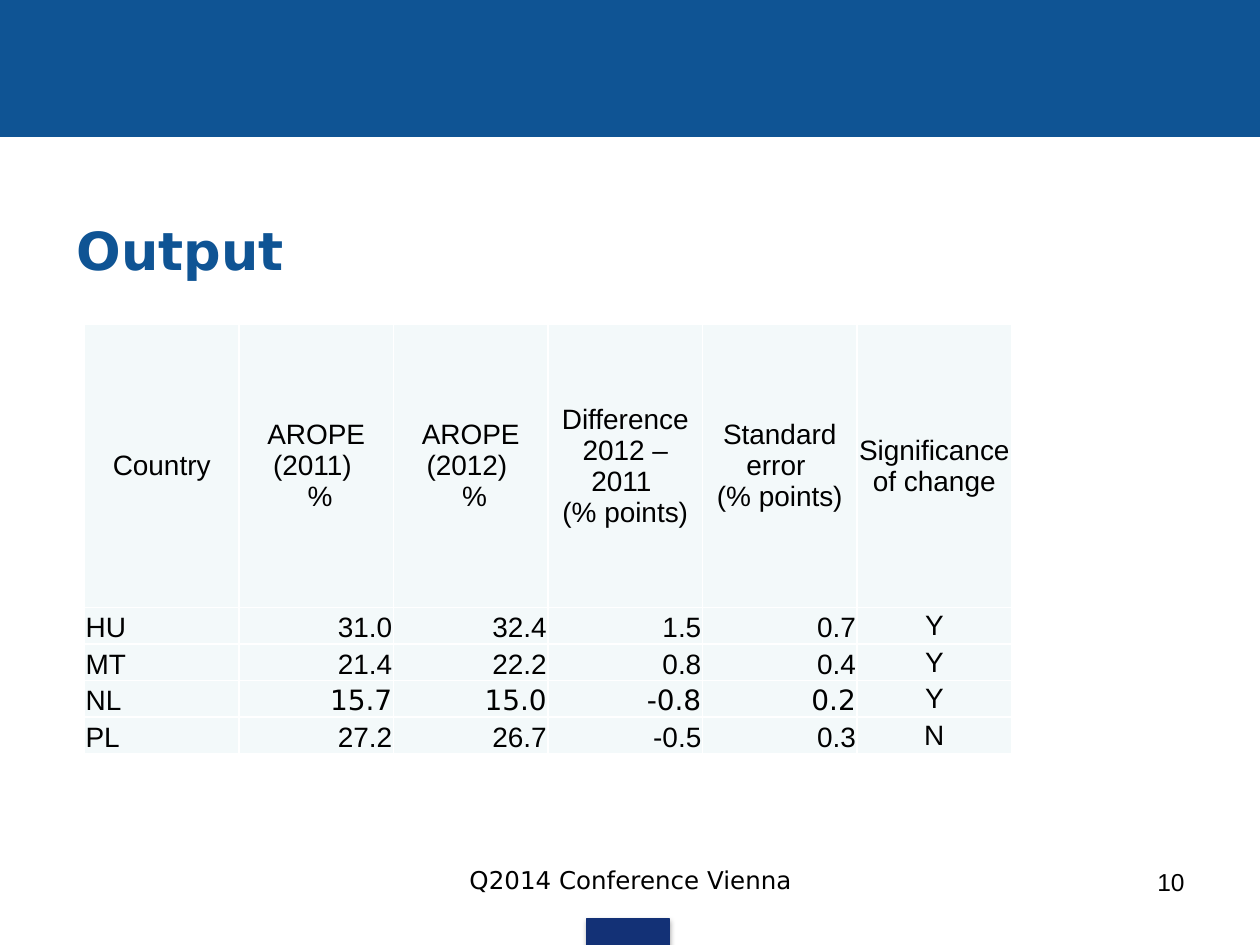
from dataclasses import dataclass

from lxml.etree import SubElement
from pptx import Presentation
from pptx.dml.color import RGBColor
from pptx.enum.shapes import MSO_SHAPE
from pptx.enum.text import MSO_ANCHOR, PP_ALIGN
from pptx.oxml.ns import qn
from pptx.util import Inches, Pt

BLUE = RGBColor(0x0F, 0x54, 0x94)
NAVY = RGBColor(0x13, 0x31, 0x76)
PALE = RGBColor(0xF3, 0xF9, 0xFA)
BLACK = RGBColor(0, 0, 0)
WHITE = RGBColor(0xFF, 0xFF, 0xFF)
SANS = "DejaVu Sans"
ARIAL = "Arial"


@dataclass
class Box:
    left: float
    top: float
    width: float
    height: float

    def lengths(self) -> tuple:
        return tuple(Inches(n) for n in (self.left, self.top, self.width, self.height))


@dataclass
class Style:
    font: str
    size: int
    color: RGBColor = BLACK
    bold: bool = False
    alignment: PP_ALIGN = PP_ALIGN.LEFT


@dataclass
class CountryRow:
    country: str
    values: tuple
    significant: str
    value_font: str = ARIAL


HEADERS = (
    ("Country",),
    ("AROPE (2011) ", " %"),
    ("AROPE (2012) ", " %"),
    ("Difference 2012 – 2011 ", "(% points)"),
    ("Standard error ", "(% points)"),
    ("Significance of change",),
)
COUNTRIES = (
    CountryRow("HU", ("31.0", "32.4", "1.5", "0.7"), "Y"),
    CountryRow("MT", ("21.4", "22.2", "0.8", "0.4"), "Y"),
    CountryRow("NL", ("15.7", "15.0", "-0.8", "0.2"), "Y", SANS),
    CountryRow("PL", ("27.2", "26.7", "-0.5", "0.3"), "N"),
)


def write(text_frame, lines: tuple, style: Style) -> None:
    for index, line in enumerate(lines):
        paragraph = text_frame.add_paragraph() if index else text_frame.paragraphs[0]
        paragraph.alignment = style.alignment
        run = paragraph.add_run()
        run.text = line
        run.font.name = style.font
        run.font.size = Pt(style.size)
        run.font.bold = style.bold
        run.font.color.rgb = style.color


def add_band(slide, box: Box, color: RGBColor):
    shape = slide.shapes.add_shape(MSO_SHAPE.RECTANGLE, *box.lengths())
    shape.shadow.inherit = False
    shape.fill.solid()
    shape.fill.fore_color.rgb = color
    shape.line.color.rgb = color
    shape.line.width = Pt(0.75)
    return shape


def add_drop_shadow(shape) -> None:
    effects = shape._element.spPr.find(qn("a:effectLst"))
    shadow = SubElement(effects, qn("a:outerShdw"), blurRad=str(Pt(3.1)),
                        dist=str(Pt(1.8)), dir="5400000", rotWithShape="0")
    color = SubElement(shadow, qn("a:srgbClr"), val=str(BLACK))
    SubElement(color, qn("a:alpha"), val="35000")


def add_title(slide, box: Box, text: str) -> None:
    title = slide.shapes.title
    title.left, title.top, title.width, title.height = box.lengths()
    title.text_frame.vertical_anchor = MSO_ANCHOR.MIDDLE
    write(title.text_frame, (text,), Style(SANS, 30, BLUE, True))
    properties = title.text_frame.paragraphs[0]._p.get_or_add_pPr()
    properties.set("marL", str(Inches(0.39)))
    properties.set("indent", str(-Inches(0.39)))


def add_label(slide, box: Box, text: str, style: Style) -> None:
    label = slide.shapes.add_textbox(*box.lengths())
    label.text_frame.word_wrap = True
    write(label.text_frame, (text,), style)


def fill_cell(cell, lines: tuple, style: Style, anchor: MSO_ANCHOR) -> None:
    cell.margin_left = cell.margin_right = cell.margin_top = Inches(0.01)
    cell.margin_bottom = 0
    cell.vertical_anchor = anchor
    write(cell.text_frame, lines, style)
    properties = cell._tc.get_or_add_tcPr()
    for side in ("lnL", "lnR", "lnT", "lnB"):
        border = SubElement(properties, qn(f"a:{side}"), w=str(Pt(1)))
        fill = SubElement(border, qn("a:solidFill"))
        SubElement(fill, qn("a:srgbClr"), val=str(WHITE))
    cell.fill.solid()
    cell.fill.fore_color.rgb = PALE


def add_country_table(slide, box: Box) -> None:
    frame = slide.shapes.add_table(len(COUNTRIES) + 1, len(HEADERS), *box.lengths())
    table = frame.table
    table.first_row = False
    table.horz_banding = False
    for column in table.columns:
        column.width = Inches(box.width / len(HEADERS))
    for index, row in enumerate(table.rows):
        row.height = Inches(0.29 if index else 2.25)

    left = Style(ARIAL, 16)
    centred = Style(ARIAL, 16, alignment=PP_ALIGN.CENTER)
    for column, lines in enumerate(HEADERS):
        fill_cell(table.cell(0, column), lines, centred, MSO_ANCHOR.MIDDLE)
    for row, country in enumerate(COUNTRIES, 1):
        number = Style(country.value_font, 16, alignment=PP_ALIGN.RIGHT)
        fill_cell(table.cell(row, 0), (country.country,), left, MSO_ANCHOR.BOTTOM)
        for column, value in enumerate(country.values, 1):
            fill_cell(table.cell(row, column), (value,), number, MSO_ANCHOR.BOTTOM)
        fill_cell(table.cell(row, len(HEADERS) - 1), (country.significant,),
                  centred, MSO_ANCHOR.MIDDLE)


def main() -> None:
    presentation = Presentation()
    presentation.slide_width = Inches(10)
    presentation.slide_height = Inches(7.5)
    slide = presentation.slides.add_slide(presentation.slide_layouts[5])

    add_band(slide, Box(0, 0, 10, 1.08), BLUE)
    add_drop_shadow(add_band(slide, Box(4.66, 7.29, 0.65, 0.22), NAVY))
    add_title(slide, Box(0.51, 1.47, 9, 1.02), "Output")
    add_label(slide, Box(3.42, 6.82, 3.17, 0.53), "Q2014 Conference Vienna",
              Style(SANS, 14, alignment=PP_ALIGN.CENTER))
    add_label(slide, Box(7.17, 6.83, 2.33, 0.52), "10",
              Style(ARIAL, 14, alignment=PP_ALIGN.RIGHT))
    add_country_table(slide, Box(0.67, 2.57, 7.36, 3.42))
    presentation.save("out.pptx")


if __name__ == "__main__":
    main()
